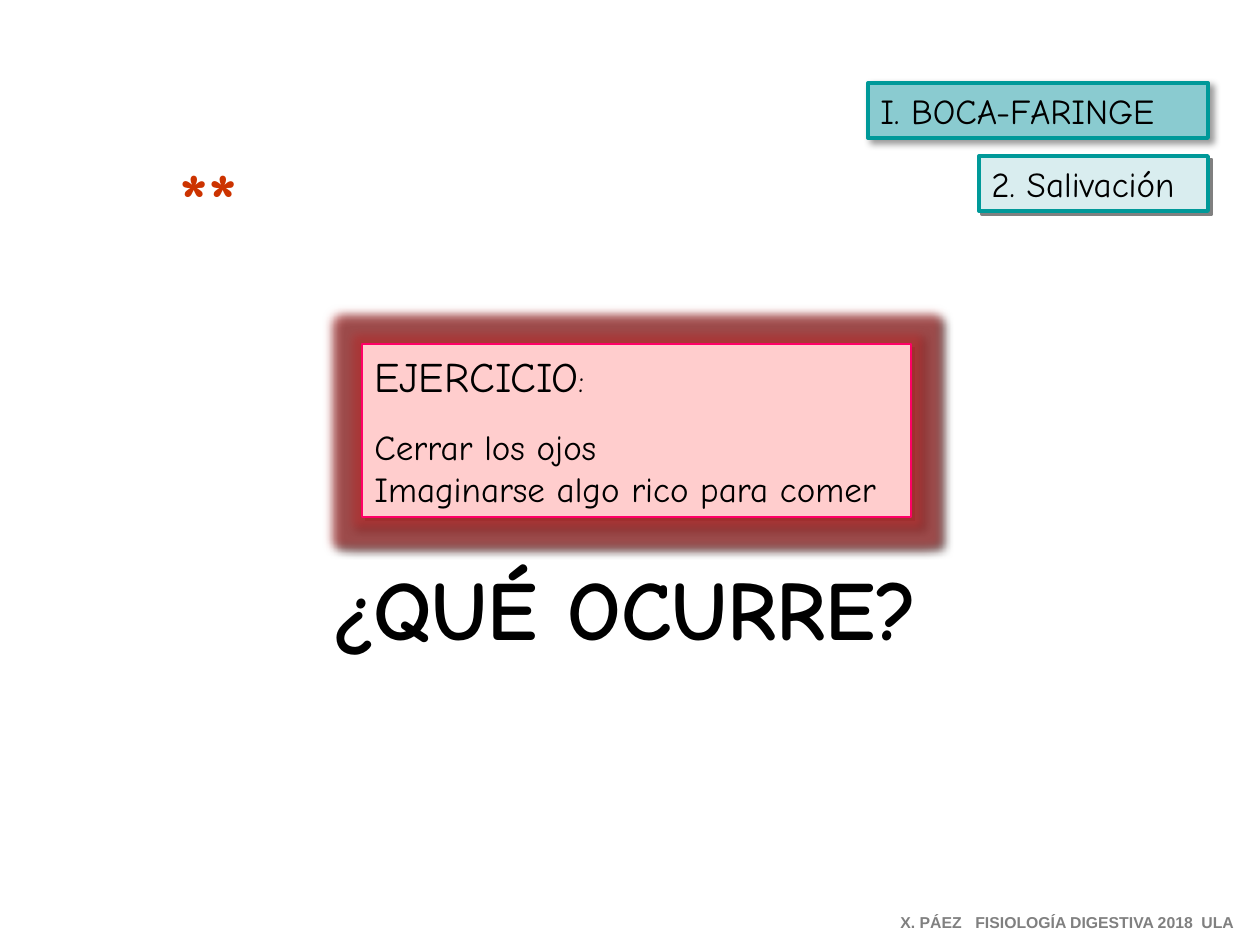
from lxml.etree import SubElement
from pptx import Presentation
from pptx.dml.color import RGBColor
from pptx.enum.shapes import MSO_SHAPE
from pptx.enum.text import MSO_ANCHOR, PP_ALIGN
from pptx.oxml.ns import qn
from pptx.util import Emu, Pt

PX_PER_INCH = 126
BLACK = RGBColor(0x00, 0x00, 0x00)
WHITE = RGBColor(0xFF, 0xFF, 0xFF)
GRAY = RGBColor(0x80, 0x80, 0x80)
ORANGE = RGBColor(0xCC, 0x33, 0x00)
TEAL = RGBColor(0x00, 0x99, 0x99)
MID_TEAL = RGBColor(0x8A, 0xCB, 0xD0)
PALE_TEAL = RGBColor(0xD9, 0xED, 0xEF)
PINK = RGBColor(0xFF, 0xCD, 0xCD)
MAGENTA = RGBColor(0xFF, 0x00, 0x66)
GLOW_RED = RGBColor(0xC0, 0x39, 0x39)
HAND = "Comic Neue"


def px(length):
    return Emu(round(length * 914400 / PX_PER_INCH))


def add_color(effect, color, opacity):
    tint = SubElement(effect, qn("a:srgbClr"), val=str(color))
    SubElement(tint, qn("a:alpha"), val=str(opacity * 1000))


def add_shadow(effects, color, opacity=100, blur=0, distance=2.8):
    shadow = SubElement(effects, qn("a:outerShdw"), blurRad=str(Pt(blur)),
                        dist=str(Pt(distance)), dir="2700000", algn="tl", rotWithShape="0")
    add_color(shadow, color, opacity)


def add_panel(slide, box, fill, line=None, line_width=0):
    """Add a flat rectangle and return it with its empty effect list."""
    panel = slide.shapes.add_shape(MSO_SHAPE.RECTANGLE, *map(px, box))
    panel.shadow.inherit = False
    panel.fill.solid()
    panel.fill.fore_color.rgb = fill
    if line is None:
        panel.line.fill.background()
    else:
        panel.line.color.rgb = line
        panel.line.width = Pt(line_width)
    frame = panel.text_frame
    frame.word_wrap = False
    frame.vertical_anchor = MSO_ANCHOR.TOP
    return frame, panel._element.spPr.find(qn("a:effectLst"))


def write(paragraph, text, size, color=BLACK, name=HAND, bold=False, align=PP_ALIGN.LEFT):
    paragraph.alignment = align
    font = paragraph.font
    font.size, font.name, font.bold = Pt(size), name, bold
    font.color.rgb = color
    run = paragraph.add_run()
    run.text = text
    return run


def add_heading(slide, box, text, fill, **shadow):
    frame, effects = add_panel(slide, box, fill, TEAL, 2.25)
    add_shadow(effects, **shadow)
    write(frame.paragraphs[0], text, 20)


def add_exercise(slide, box, title, steps):
    frame, effects = add_panel(slide, box, PINK, MAGENTA, 0.75)
    glow = SubElement(effects, qn("a:glow"), rad=str(Pt(11)))
    add_color(glow, GLOW_RED, 60)
    add_shadow(effects, BLACK)
    heading = frame.paragraphs[0]
    write(heading, title, 24)
    colon = heading.add_run()
    colon.text = ":"
    colon.font.size = Pt(18)
    for index, step in enumerate(steps):
        paragraph = frame.add_paragraph()
        if index == 0:
            paragraph.space_before = Pt(14)
        write(paragraph, step, 20)


def add_question(slide, box, text):
    frame, _ = add_panel(slide, box, WHITE)
    frame.vertical_anchor = MSO_ANCHOR.MIDDLE
    write(frame.paragraphs[0], text, 48, bold=True, align=PP_ALIGN.CENTER)


def add_stars(slide, box, text):
    frame = slide.shapes.add_textbox(*map(px, box)).text_frame
    frame.word_wrap = True
    run = write(frame.paragraphs[0], text, 44, ORANGE, bold=True, align=PP_ALIGN.CENTER)
    effects = SubElement(run.font._element, qn("a:effectLst"))
    add_shadow(effects, BLACK)


def add_credit(slide, box, parts, stops):
    """Write the parts on one line, each after the first at its tab stop."""
    frame = slide.shapes.add_textbox(*map(px, box)).text_frame
    frame.word_wrap = False
    paragraph = frame.paragraphs[0]
    tabs = SubElement(paragraph._p.get_or_add_pPr(), qn("a:tabLst"))
    for stop in stops:
        SubElement(tabs, qn("a:tab"), pos=str(px(stop)), algn="l")
    write(paragraph, "\t".join(parts), 9, GRAY, "Arial", bold=True)


def main():
    deck = Presentation()
    deck.slide_width, deck.slide_height = px(1260), px(945)
    slide = deck.slides.add_slide(deck.slide_layouts[6])
    add_exercise(slide, (362, 344, 549, 173), "EJERCICIO",
                 ["Cerrar los ojos", "Imaginarse algo rico para comer"])
    add_question(slide, (292, 562, 665, 89), "¿QUÉ OCURRE?")
    add_stars(slide, (154, 145, 110, 105), "**")
    add_heading(slide, (979, 156, 229, 55), "2. Salivación", PALE_TEAL, color=GRAY)
    add_heading(slide, (868, 83, 340, 55), "I. BOCA-FARINGE", MID_TEAL,
                color=BLACK, opacity=40, blur=4, distance=3)
    add_credit(slide, (888, 907, 360, 32),
               ["X. PÁEZ", "FISIOLOGÍA DIGESTIVA 2018", "ULA"], [75, 301])
    deck.save("out.pptx")


if __name__ == "__main__":
    main()
